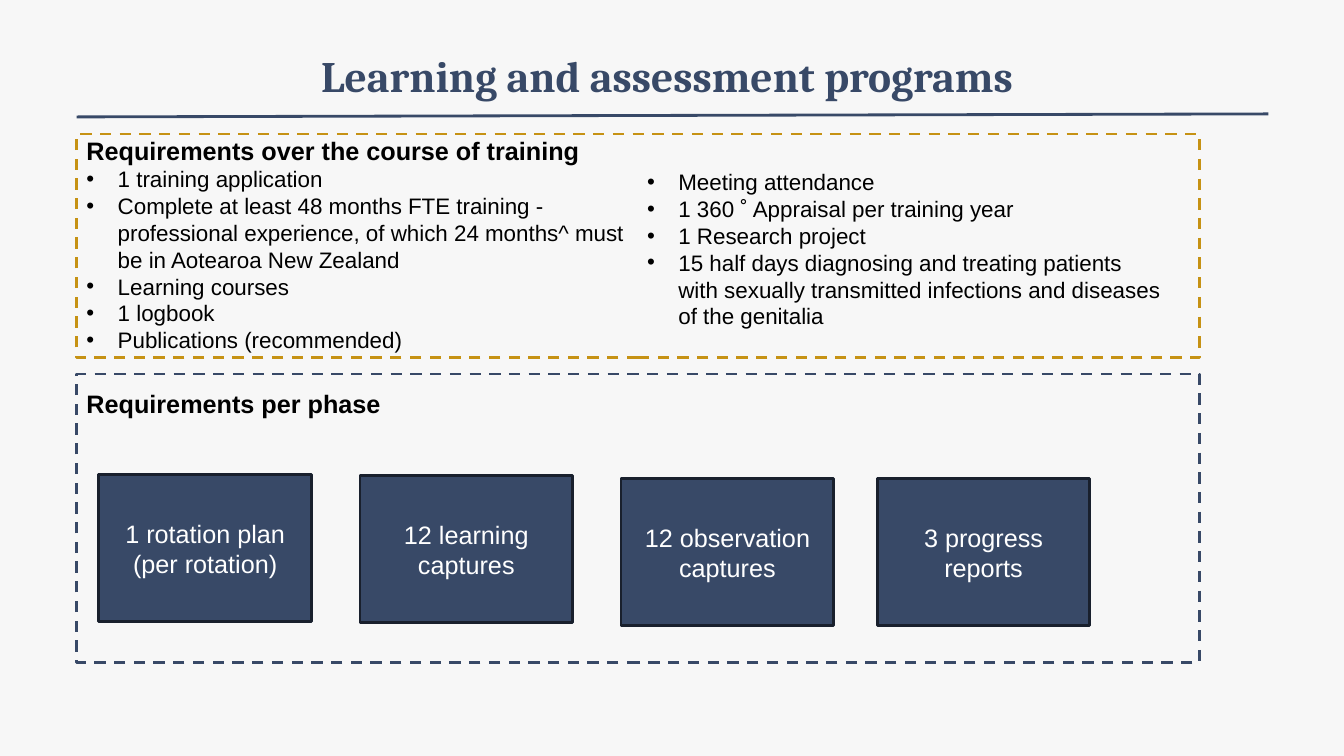
"""Build the slide on learning and assessment programs."""
from lxml import etree
from pptx import Presentation
from pptx.dml.color import RGBColor
from pptx.enum import dml, shapes, text
from pptx.oxml import ns
from pptx.util import Inches, Pt

NAVY = RGBColor(0x38, 0x49, 0x67)
DARK = RGBColor(0x19, 0x20, 0x2D)
GOLD = RGBColor(0xC6, 0x92, 0x14)
PALE = RGBColor(0xF7, 0xF7, 0xF7)
BLACK = RGBColor(0, 0, 0)
WHITE = RGBColor(0xFF, 0xFF, 0xFF)

TITLE = "Learning and assessment programs"
COURSE = "Requirements over the course of training"
LEFT = [
    "1 training application",
    "Complete at least 48 months FTE training - professional experience, "
    "of which 24 months^ must be in Aotearoa New Zealand",
    "Learning courses",
    "1 logbook",
    "Publications (recommended)",
]
RIGHT = [
    "Meeting attendance",
    "1 360 ˚ Appraisal per training year",
    "1 Research project",
    "15 half days diagnosing and treating patients with sexually "
    "transmitted infections and diseases of the genitalia",
]
PHASE = "Requirements per phase"
CARDS = [
    ("1 rotation plan (per rotation)", 0.98, 4.71),
    ("12 learning captures", 3.57, 4.72),
    ("12 observation captures", 6.16, 4.75),
    ("3 progress reports", 8.7, 4.75),
]
EDGE, WIDE = 0.76, 11.14
FRAMES = [(1.33, 2.22, GOLD), (3.71, 2.86, NAVY)]
CARD_W, CARD_H = 2.11, 1.46
INDENT = Inches(0.31)
CENTER = text.PP_ALIGN.CENTER


def style(para, size, color, bold=False, name="Arial"):
    font = para.font
    font.size, font.bold, font.name = Pt(size), bold, name
    font.color.rgb = color


def bullet(para):
    props = para._p.get_or_add_pPr()
    props.set("marL", str(INDENT))
    props.set("indent", str(-INDENT))
    etree.SubElement(props, ns.qn("a:buFont")).set("typeface", "Arial")
    etree.SubElement(props, ns.qn("a:buChar")).set("char", "•")


def write(slide, area, head, items=()):
    frame = slide.shapes.add_textbox(*map(Inches, area)).text_frame
    frame.word_wrap = True
    lines = ([head] if head else []) + list(items)
    for i, line in enumerate(lines):
        para = frame.paragraphs[0] if i == 0 else frame.add_paragraph()
        para.text = line
        if head and i == 0:
            style(para, 18, BLACK, True)
        else:
            bullet(para)
            style(para, 16, BLACK)
    return frame


def block(slide, area, line, fill=None):
    box = slide.shapes.add_shape(
        shapes.MSO_SHAPE.RECTANGLE, *map(Inches, area))
    box.shadow.inherit = False
    box.line.color.rgb, box.line.width = line, Pt(2)
    if fill is None:
        box.fill.background()
        box.line.dash_style = dml.MSO_LINE.DASH
    else:
        box.fill.solid()
        box.fill.fore_color.rgb = fill
    return box


def header(slide):
    frame = write(slide, (1.61, 0.29, 10.01, 0.91), TITLE)
    frame.vertical_anchor = text.MSO_ANCHOR.MIDDLE
    para = frame.paragraphs[0]
    para.alignment = CENTER
    style(para, 31, NAVY, True, "Cambria")
    rule = slide.shapes.add_connector(
        shapes.MSO_CONNECTOR.STRAIGHT, *map(Inches, (EDGE, 1.16, 12.58, 1.13)))
    rule.line.color.rgb, rule.line.width = NAVY, Pt(2)
    etree.SubElement(rule._element.spPr, ns.qn("a:effectLst"))


def card(slide, label, x, y):
    frame = block(slide, (x, y, CARD_W, CARD_H), DARK, NAVY).text_frame
    frame.word_wrap = True
    frame.vertical_anchor = text.MSO_ANCHOR.MIDDLE
    para = frame.paragraphs[0]
    para.text, para.alignment = label, CENTER
    style(para, 18, WHITE)


def main():
    deck = Presentation()
    deck.slide_width, deck.slide_height = Inches(13.33), Inches(7.5)
    slide = deck.slides.add_slide(deck.slide_layouts[6])
    slide.background.fill.solid()
    slide.background.fill.fore_color.rgb = PALE
    header(slide)
    for top, tall, color in FRAMES:
        block(slide, (EDGE, top, WIDE, tall), color)
    write(slide, (EDGE, 1.29, 5.56, 2.59), COURSE, LEFT)
    write(slide, (6.32, 1.62, 5.35, 1.72), None, RIGHT)
    write(slide, (EDGE, 3.8, 6.67, 0.4), PHASE)
    for label, x, y in CARDS:
        card(slide, label, x, y)
    deck.save("out.pptx")


if __name__ == "__main__":
    main()
